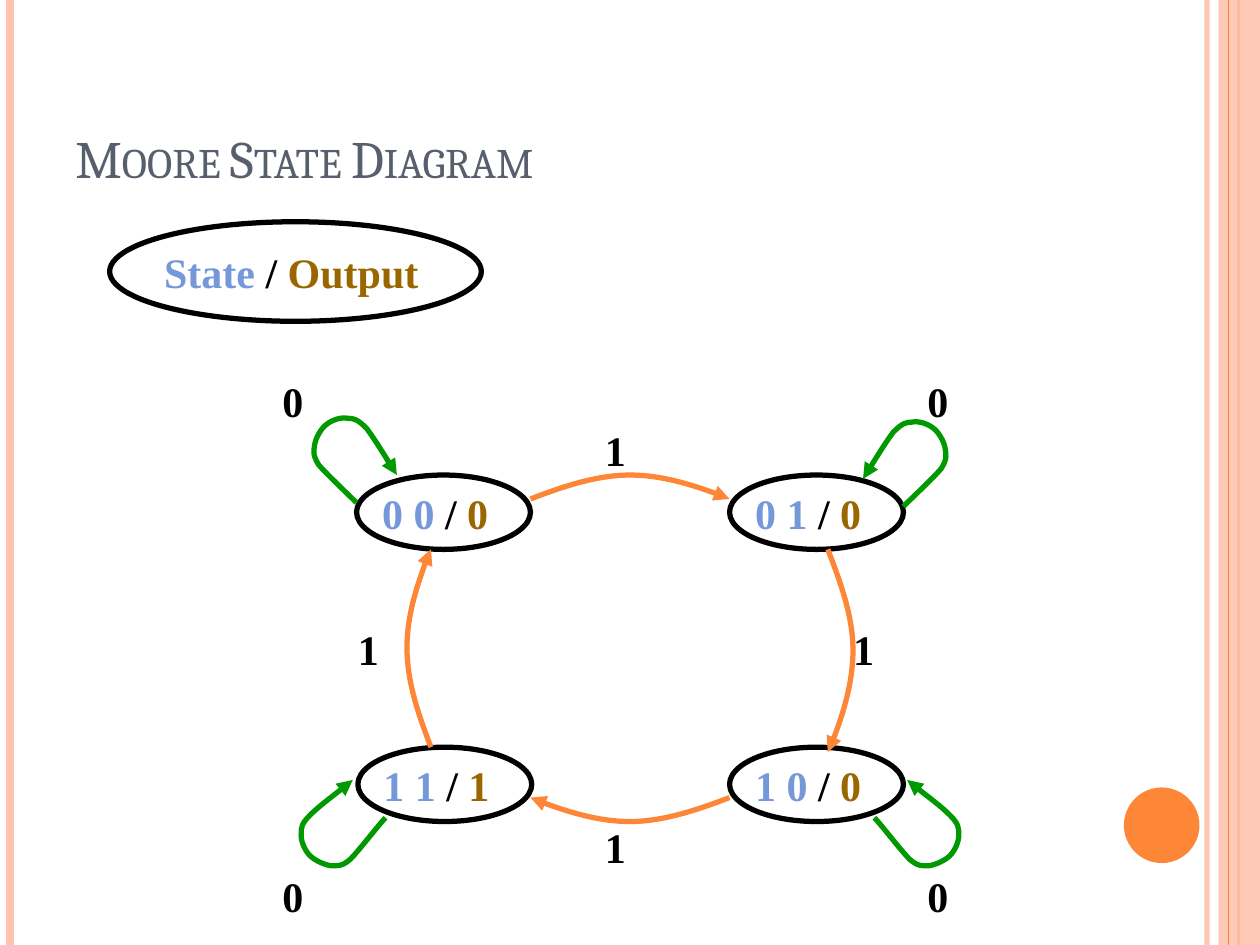
from lxml import etree
from pptx import Presentation
from pptx.dml.color import RGBColor
from pptx.enum.shapes import MSO_CONNECTOR, MSO_SHAPE
from pptx.enum.text import MSO_ANCHOR, PP_ALIGN
from pptx.oxml.ns import qn
from pptx.util import Inches, Pt

OVAL, RECT = MSO_SHAPE.OVAL, MSO_SHAPE.RECTANGLE
LINE = MSO_CONNECTOR.STRAIGHT
LEFT = PP_ALIGN.LEFT
MIDDLE, BOTTOM = MSO_ANCHOR.MIDDLE, MSO_ANCHOR.BOTTOM
BLACK, BLUE, BROWN = "000000", "7598D9", "996600"
GREEN, ORANGE, PEACH = "009900", "FE8637", "FEC3AE"


def tint(fill, color):
    fill.solid()
    fill.fore_color.rgb = RGBColor.from_string(color)


def write(shape, parts):
    frame = shape.text_frame
    frame.margin_left = frame.margin_right = 0
    frame.margin_top = frame.margin_bottom = 0
    frame.word_wrap = True
    para = frame.paragraphs[0]
    para.alignment = LEFT
    para.font.name, para.font.size, para.font.bold = "Times New Roman", Pt(24), True
    for text, color in parts:
        run = para.add_run()
        run.text = text
        tint(run.font.fill, color)


deck = Presentation()
deck.slide_width, deck.slide_height = Inches(10), Inches(7.5)
slide = deck.slides.add_slide(deck.slide_layouts[6])
shapes = slide.shapes

band = shapes.add_shape(RECT, Inches(9.67), 0, Inches(0.33), Inches(7.5))
rails = []
for x, color, width in [(9.58, PEACH, 3), (0.08, PEACH, 4.5), (9.83, ORANGE, 1.5), (9.75, ORANGE, 0.75)]:
    if x == 9.75:
        shapes._spTree.append(band._element)
    rail = shapes.add_connector(LINE, Inches(x), 0, Inches(x), Inches(7.5))
    tint(rail.line.fill, color)
    rail.line.width = Pt(width)
    etree.SubElement(rail._element.spPr, qn("a:effectLst"))
    rails.append(rail)

dot = shapes.add_shape(OVAL, Inches(8.92), Inches(6.25), Inches(0.6), Inches(0.6))
for shape, color in [(band, PEACH), (dot, ORANGE)]:
    shape.shadow.inherit = False
    tint(shape.fill, color)
    shape.line.fill.background()
for shape, alpha in [(rails[0], "93000"), (band, "87000")]:
    code = next(shape._element.iter(qn("a:srgbClr")))
    etree.SubElement(code, qn("a:alpha"), val=alpha)

title = shapes.add_textbox(Inches(0.5), Inches(0.3), Inches(8.42), Inches(1.25))
title.text_frame.word_wrap = True
title.text_frame.vertical_anchor = BOTTOM
para = title.text_frame.paragraphs[0]
para.font.name, para.font.size = "Cambria", Pt(30)
tint(para.font.fill, "575F6D")
run = para.add_run()
run.text = "Moore State Diagram"
run._r.get_or_add_rPr().set("cap", "small")

nodes = [
    (0.87, 1.76, 2.95, 0.79, "State", "Output"),
    (2.83, 3.77, 1.38, 0.59, "0 0", "0"),
    (5.79, 3.77, 1.38, 0.59, "0 1", "0"),
    (2.84, 5.93, 1.38, 0.59, "1 1", "1"),
    (5.79, 5.93, 1.38, 0.59, "1 0", "0"),
]
for x, y, w, h, state, out in nodes:
    node = shapes.add_shape(OVAL, Inches(x), Inches(y), Inches(w), Inches(h))
    node.shadow.inherit = False
    node.fill.background()
    tint(node.line.fill, BLACK)
    node.line.width = Pt(3)
    node.text_frame.vertical_anchor = MIDDLE
    write(node, [(state + " ", BLUE), ("/ ", BLACK), (out, BROWN)])

upper = [
    (2.83, 3.99), (2.78, 3.94), (2.59, 3.76), (2.53, 3.69), (2.48, 3.61), (2.49, 3.58), (2.5, 3.52),
    (2.51, 3.47), (2.55, 3.4), (2.59, 3.37), (2.64, 3.33), (2.71, 3.31), (2.76, 3.32),
    (2.81, 3.32), (2.84, 3.33), (2.91, 3.4), (2.97, 3.48), (3.1, 3.69), (3.15, 3.77),
]
lower = [
    (3.06, 6.49), (3.01, 6.54), (2.85, 6.75), (2.78, 6.82), (2.71, 6.88), (2.68, 6.87), (2.62, 6.87),
    (2.57, 6.86), (2.5, 6.83), (2.46, 6.79), (2.42, 6.75), (2.39, 6.68), (2.39, 6.63),
    (2.39, 6.57), (2.39, 6.54), (2.46, 6.47), (2.53, 6.4), (2.73, 6.25), (2.8, 6.19),
]
top = [(4.21, 3.96), (4.47, 3.86), (4.74, 3.77), (5, 3.77), (5.26, 3.77), (5.66, 3.9), (5.79, 3.96)]
right = [(6.57, 4.36), (6.67, 4.62), (6.77, 4.89), (6.77, 5.16), (6.77, 5.43), (6.64, 5.83), (6.57, 5.97)]
left = [(3.42, 5.93), (3.32, 5.67), (3.23, 5.41), (3.23, 5.14), (3.23, 4.88), (3.36, 4.49), (3.42, 4.36)]
curves = [
    (GREEN, upper),
    (GREEN, [(10 - x, y + 0.03) for x, y in upper]),
    (GREEN, lower),
    (GREEN, [(10 - x, y) for x, y in lower]),
    (ORANGE, top),
    (ORANGE, right),
    (ORANGE, [(10 - x, 10.29 - y) for x, y in top]),
    (ORANGE, left),
]
for color, knots in curves:
    trace = [(Inches(x), Inches(y)) for x, y in knots]
    pen = shapes.build_freeform(*trace[0])
    pen.add_line_segments(trace[1:], close=False)
    arrow = pen.convert_to_shape()
    route = next(arrow._element.iter(qn("a:path")))
    sides = route.findall(qn("a:lnTo"))
    for i in range(0, len(sides), 3):
        bend = etree.SubElement(route, qn("a:cubicBezTo"))
        for side in sides[i:i + 3]:
            bend.append(side[0])
            route.remove(side)
    arrow.shadow.inherit = False
    arrow.fill.background()
    tint(arrow.line.fill, color)
    arrow.line.width = Pt(3)
    etree.SubElement(arrow._element.spPr.find(qn("a:ln")), qn("a:tailEnd"), type="triangle")

labels = [
    (2.24, 2.98, "0"), (7.36, 2.98, "0"), (2.24, 6.91, "0"), (7.36, 6.91, "0"),
    (4.8, 3.37, "1"), (6.77, 4.95, "1"), (4.8, 6.52, "1"), (2.84, 4.95, "1"),
]
for x, y, text in labels:
    label = shapes.add_textbox(Inches(x), Inches(y), Inches(0.39), Inches(0.36))
    write(label, [(text, BLACK)])

deck.save("out.pptx")
